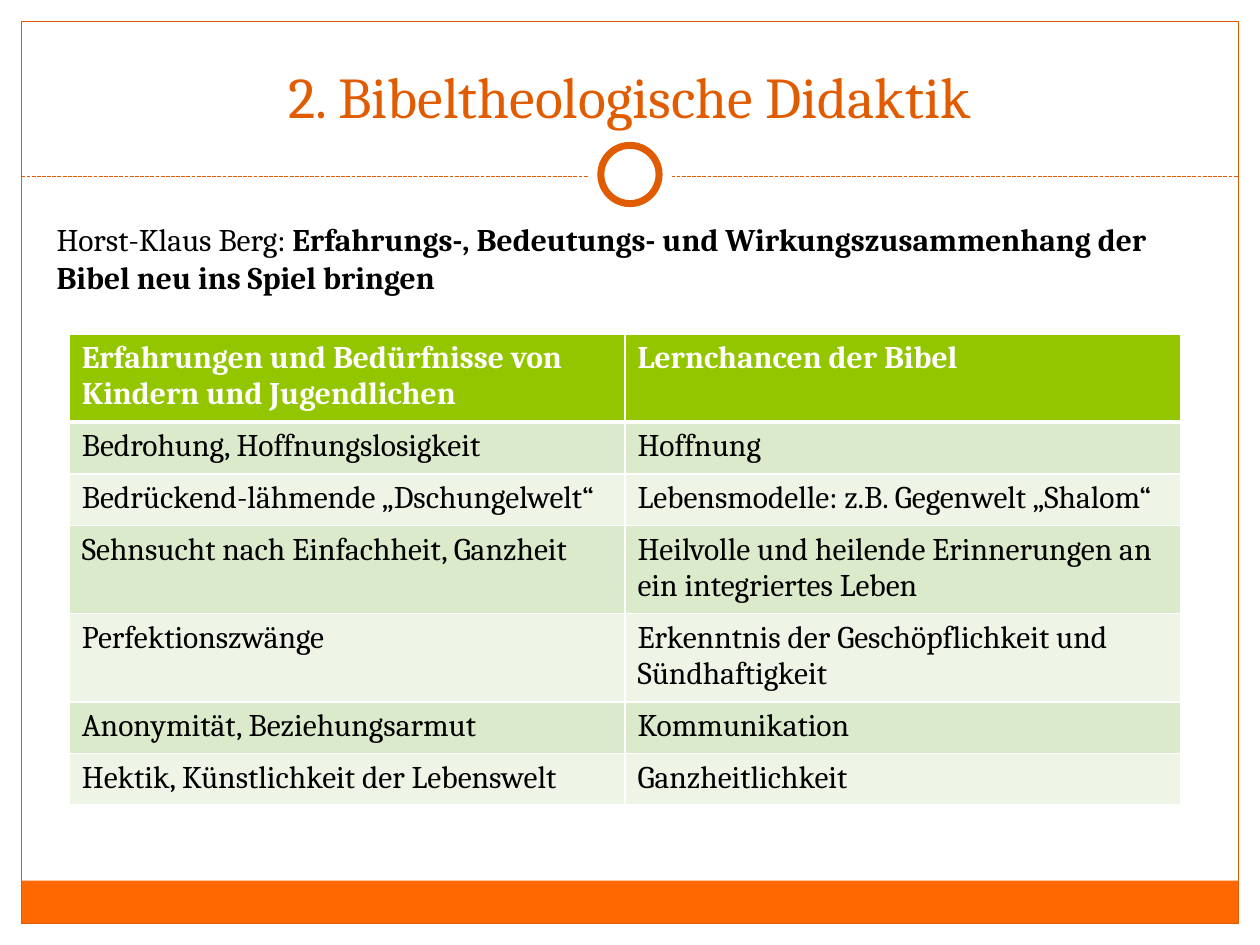
from dataclasses import dataclass

from lxml import etree
from pptx import Presentation
from pptx.dml.color import RGBColor
from pptx.enum.dml import MSO_LINE
from pptx.enum.shapes import MSO_CONNECTOR, MSO_SHAPE
from pptx.enum.text import MSO_ANCHOR, PP_ALIGN
from pptx.oxml.ns import qn
from pptx.util import Inches, Pt

RECTANGLE, OVAL = MSO_SHAPE.RECTANGLE, MSO_SHAPE.OVAL
STRAIGHT = MSO_CONNECTOR.STRAIGHT
DASHED = MSO_LINE.SQUARE_DOT
BOTTOM, TOP = MSO_ANCHOR.BOTTOM, MSO_ANCHOR.TOP
CENTER, LEFT = PP_ALIGN.CENTER, PP_ALIGN.LEFT

FONT = "Cambria"
WIDTH, HEIGHT = 10, 7.5
BLACK, WHITE = "000000", "FFFFFF"
RUST, ORANGE = "E15B00", "FF6700"
HEADER_GREEN, BANDS = "94C600", ("DCEACC", "EEF5E7")

TITLE = "2. Bibeltheologische Didaktik"
AUTHOR = "Horst-Klaus Berg: "
THESIS = "Erfahrungs-, Bedeutungs- und Wirkungszusammenhang der Bibel neu ins Spiel bringen"
CHANCES = [
    ("Erfahrungen und Bedürfnisse von Kindern und Jugendlichen", "Lernchancen der Bibel"),
    ("Bedrohung, Hoffnungslosigkeit", "Hoffnung"),
    ("Bedrückend-lähmende „Dschungelwelt“", "Lebensmodelle: z.B. Gegenwelt „Shalom“"),
    ("Sehnsucht nach Einfachheit, Ganzheit",
     "Heilvolle und heilende Erinnerungen an ein integriertes Leben"),
    ("Perfektionszwänge", "Erkenntnis der Geschöpflichkeit und Sündhaftigkeit"),
    ("Anonymität, Beziehungsarmut", "Kommunikation"),
    ("Hektik, Künstlichkeit der Lebenswelt", "Ganzheitlichkeit"),
]


@dataclass
class Box:
    left: float
    top: float
    width: float
    height: float

    def emu(self):
        return [Inches(n) for n in (self.left, self.top, self.width, self.height)]


def color(value):
    return RGBColor.from_string(value)


def add_run(paragraph, words, size, ink, bold=False):
    run = paragraph.add_run()
    run.text = words
    run.font.name = FONT
    run.font.size = Pt(size)
    run.font.bold = bold
    run.font.color.rgb = color(ink)


def add_figure(slide, preset, box, fill=None, outline=None, weight=0.75):
    figure = slide.shapes.add_shape(preset, *box.emu())
    figure.shadow.inherit = False
    if fill:
        figure.fill.solid()
        figure.fill.fore_color.rgb = color(fill)
    else:
        figure.fill.background()
    if outline:
        figure.line.color.rgb = color(outline)
        figure.line.width = Pt(weight)
    else:
        figure.line.fill.background()


def add_frame(slide, box):
    band = 0.34
    add_figure(slide, RECTANGLE,
               Box(box.left, box.top + box.height - band, box.width, band), ORANGE)
    add_figure(slide, RECTANGLE, box, outline=RUST)


def add_divider(slide, box):
    middle_x = box.left + box.width / 2
    middle_y = box.top + box.height / 2
    rule_y = Inches(1.4)
    rule = slide.shapes.add_connector(
        STRAIGHT, Inches(box.left), rule_y, Inches(box.left + box.width), rule_y)
    rule.line.color.rgb = color(RUST)
    rule.line.width = Pt(0.75)
    rule.line.dash_style = DASHED
    etree.SubElement(rule._element.spPr, qn("a:effectLst"))
    for share, outline in ((1, None), (0.69, RUST)):
        size = box.height * share
        add_figure(slide, OVAL, Box(middle_x - size / 2, middle_y - size / 2, size, size),
                   WHITE, outline, 4)


def add_text(slide, box, runs, size, anchor=TOP, align=LEFT):
    frame = slide.shapes.add_textbox(*box.emu()).text_frame
    frame.word_wrap = True
    frame.vertical_anchor = anchor
    paragraph = frame.paragraphs[0]
    paragraph.alignment = align
    for words, ink, bold in runs:
        add_run(paragraph, words, size, ink, bold)


def set_borders(cell, bottom):
    properties = cell._tc.get_or_add_tcPr()
    weights = {"a:lnL": 1, "a:lnR": 1, "a:lnT": 1, "a:lnB": bottom}
    for position, (side, weight) in enumerate(weights.items()):
        edge = etree.Element(qn(side), w=str(Pt(weight)))
        fill = etree.SubElement(edge, qn("a:solidFill"))
        etree.SubElement(fill, qn("a:srgbClr"), val=WHITE)
        properties.insert(position, edge)


def add_chances_table(slide, box):
    table = slide.shapes.add_table(len(CHANCES), len(CHANCES[0]), *box.emu()).table
    for row, entries in enumerate(CHANCES):
        header = row == 0
        for column, words in enumerate(entries):
            cell = table.cell(row, column)
            cell.fill.solid()
            cell.fill.fore_color.rgb = color(HEADER_GREEN if header else BANDS[(row - 1) % 2])
            set_borders(cell, 3 if header else 1)
            add_run(cell.text_frame.paragraphs[0], words, 18,
                    WHITE if header else BLACK, header)


def main():
    deck = Presentation()
    deck.slide_width, deck.slide_height = Inches(WIDTH), Inches(HEIGHT)
    slide = deck.slides.add_slide(deck.slide_layouts[6])
    margin = 0.17
    inner_width = WIDTH - 2 * margin
    add_frame(slide, Box(margin, margin, inner_width, HEIGHT - 2 * margin))
    add_divider(slide, Box(margin, 1.05, inner_width, 0.67))
    add_text(slide, Box(0.33, 0.25, 9.33, 0.83), [(TITLE, RUST, False)], 33, BOTTOM, CENTER)
    add_text(slide, Box(0.35, 1.7, 9.21, 0.71),
             [(AUTHOR, BLACK, False), (THESIS, BLACK, True)], 18)
    add_chances_table(slide, Box(0.55, 2.65, 8.82, 0.41 * len(CHANCES)))
    deck.save("out.pptx")


if __name__ == "__main__":
    main()
